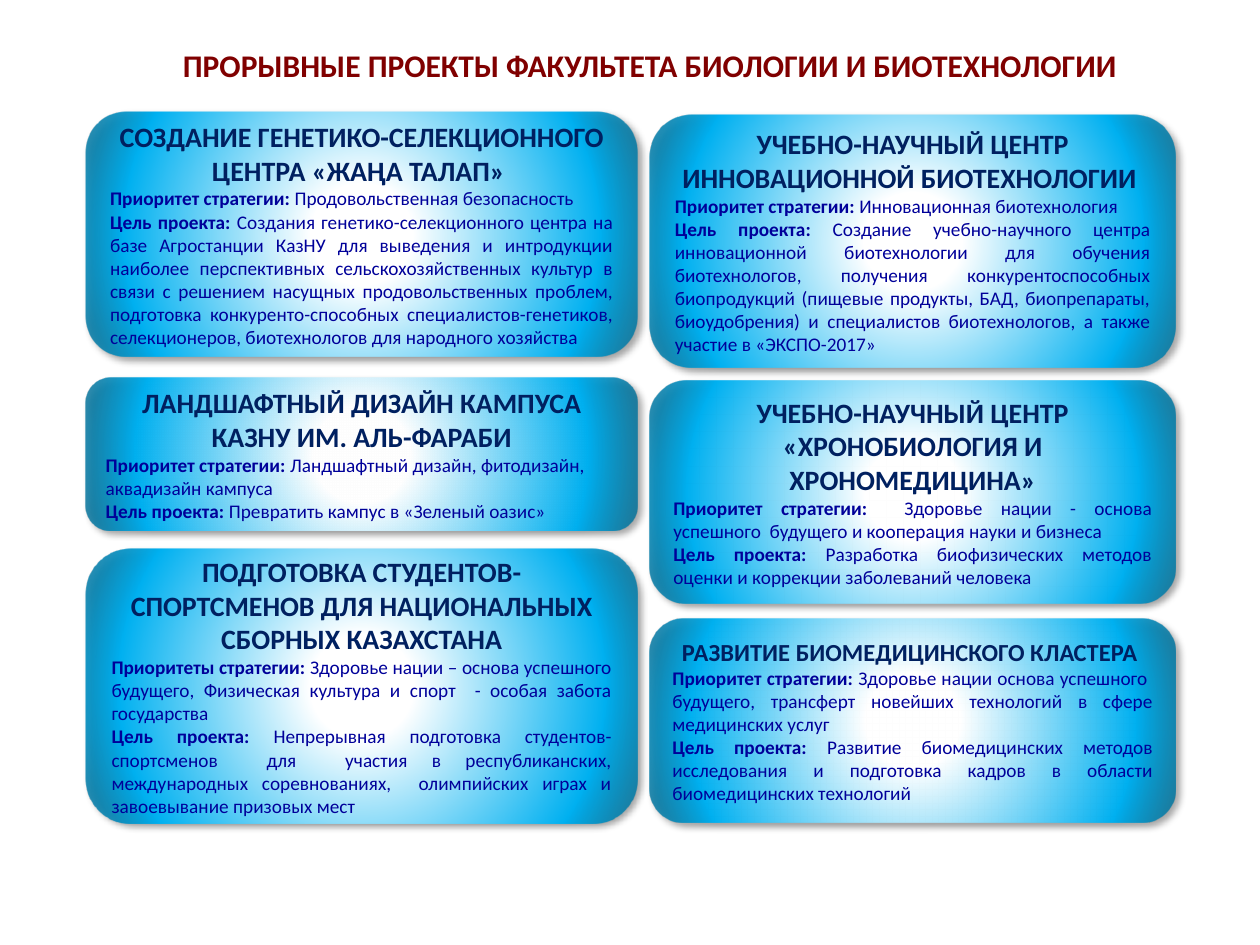
import pptx
import pptx.util
import pptx.dml.color
import pptx.enum.shapes
import pptx.enum.text
import pptx.oxml

Pt = pptx.util.Pt
RGBColor = pptx.dml.color.RGBColor
ALIGN = pptx.enum.text.PP_ALIGN

MAROON = RGBColor(0x80, 0x00, 0x00)
NAVY = RGBColor(0x00, 0x20, 0x60)
BLUE = RGBColor(0x00, 0x00, 0x99)

NS = 'xmlns:a="http://schemas.openxmlformats.org/drawingml/2006/main"'
GRADIENT = f"""<a:gradFill {NS} rotWithShape="1"><a:gsLst>
<a:gs pos="6000"><a:srgbClr val="FFFFFF"/></a:gs>
<a:gs pos="17000"><a:srgbClr val="FFFFFF"/></a:gs>
<a:gs pos="79000"><a:srgbClr val="00B0F0"/></a:gs>
<a:gs pos="100000"><a:srgbClr val="006A90"><a:alpha val="80000"/></a:srgbClr></a:gs>
</a:gsLst><a:path path="circle">
<a:fillToRect l="50000" t="50000" r="50000" b="50000"/></a:path></a:gradFill>"""
SHADOW = f"""<a:outerShdw {NS} blurRad="{Pt(4)}" dist="{Pt(3)}" dir="2700000"
algn="tl" rotWithShape="0"><a:srgbClr val="000000"><a:alpha val="40000"/></a:srgbClr></a:outerShdw>"""

LEFT = (49, 315.4)
RIGHT = (371.5, 300.2)
GOAL = "Цель проекта: "

CARDS = [
    (LEFT, 63.8, 139.9, 16, ALIGN.JUSTIFY,
     "СОЗДАНИЕ ГЕНЕТИКО-СЕЛЕКЦИОННОГО ЦЕНТРА «ЖАҢА ТАЛАП» ",
     "Приоритет стратегии: ", "Продовольственная безопасность",
     "Создания генетико-селекционного центра на базе Агростанции КазНУ для выведения и "
     "интродукции наиболее перспективных сельскохозяйственных культур в связи с решением "
     "насущных продовольственных проблем, подготовка конкуренто-способных "
     "специалистов-генетиков, селекционеров, биотехнологов для народного хозяйства "),
    (LEFT, 215.8, 87.4, 16, ALIGN.LEFT,
     "ЛАНДШАФТНЫЙ ДИЗАЙН КАМПУСА КАЗНУ ИМ. АЛЬ-ФАРАБИ",
     "Приоритет стратегии:", " Ландшафтный дизайн, фитодизайн, аквадизайн кампуса",
     "Превратить кампус в «Зеленый оазис»"),
    (LEFT, 313.6, 156.6, 16, ALIGN.JUSTIFY,
     "ПОДГОТОВКА СТУДЕНТОВ-СПОРТСМЕНОВ ДЛЯ НАЦИОНАЛЬНЫХ СБОРНЫХ КАЗАХСТАНА",
     "Приоритеты стратегии: ",
     "Здоровье нации – основа успешного будущего, Физическая культура и спорт  - особая "
     "забота государства",
     "Непрерывная подготовка студентов-спортсменов  для  участия в республиканских, "
     "международных соревнованиях,  олимпийских играх и завоевывание призовых мест"),
    (RIGHT, 65.5, 144.7, 16, ALIGN.JUSTIFY,
     "УЧЕБНО-НАУЧНЫЙ ЦЕНТР ИННОВАЦИОННОЙ БИОТЕХНОЛОГИИ ",
     "Приоритет стратегии: ", "Инновационная биотехнология",
     "Создание учебно-научного центра инновационной биотехнологии для обучения "
     "биотехнологов, получения конкурентоспособных биопродукций (пищевые продукты, БАД, "
     "биопрепараты, биоудобрения) и специалистов биотехнологов, а также участие в "
     "«ЭКСПО-2017»"),
    (RIGHT, 217.4, 127.4, 16, ALIGN.JUSTIFY,
     "УЧЕБНО-НАУЧНЫЙ ЦЕНТР «ХРОНОБИОЛОГИЯ И ХРОНОМЕДИЦИНА»",
     "Приоритет стратегии:  ",
     "Здоровье нации - основа успешного  будущего и кооперация науки и бизнеса ",
     "Разработка биофизических методов оценки и коррекции заболеваний человека "),
    (RIGHT, 353.5, 116.6, 14, ALIGN.JUSTIFY,
     "РАЗВИТИЕ БИОМЕДИЦИНСКОГО КЛАСТЕРА ",
     "Приоритет стратегии: ",
     "Здоровье нации основа успешного  будущего, трансферт новейших технологий в сфере "
     "медицинских услуг",
     "Развитие биомедицинских методов исследования и подготовка кадров в области "
     "биомедицинских технологий"),
]


def add_run(p, text, size, color, bold):
    r = p.add_run()
    r.text = text
    r.font.name = "Calibri"
    r.font.size = Pt(size)
    r.font.bold = bold
    r.font.color.rgb = color


prs = pptx.Presentation()
prs.slide_width, prs.slide_height = Pt(720), Pt(540)
slide = prs.slides.add_slide(prs.slide_layouts[6])

for (x, width), y, height, size, align, title, label, priority, goal in CARDS:
    s = slide.shapes.add_shape(pptx.enum.shapes.MSO_SHAPE.ROUNDED_RECTANGLE,
                               Pt(x), Pt(y), Pt(width), Pt(height))
    s.line.fill.background()
    s.shadow.inherit = False
    spPr = s._element.spPr
    spPr.insert(2, pptx.oxml.parse_xml(GRADIENT))
    spPr.find(pptx.oxml.ns.qn("a:effectLst")).append(pptx.oxml.parse_xml(SHADOW))

    tf = s.text_frame
    tf.word_wrap = True
    tf.vertical_anchor = pptx.enum.text.MSO_ANCHOR.MIDDLE
    p = tf.paragraphs[0]
    p.alignment = ALIGN.CENTER
    add_run(p, title, size, NAVY, True)
    for heading, body in ((label, priority), (GOAL, goal)):
        p = tf.add_paragraph()
        p.alignment = align
        add_run(p, heading, 11, BLUE, True)
        add_run(p, body, 11, BLUE, False)

s = slide.shapes.add_textbox(Pt(36.7), Pt(23), Pt(669.6), Pt(29))
tf = s.text_frame
tf.word_wrap = True
p = tf.paragraphs[0]
p.alignment = ALIGN.CENTER
add_run(p, "ПРОРЫВНЫЕ ПРОЕКТЫ ФАКУЛЬТЕТА БИОЛОГИИ И БИОТЕХНОЛОГИИ", 18, MAROON, True)

prs.save("out.pptx")
